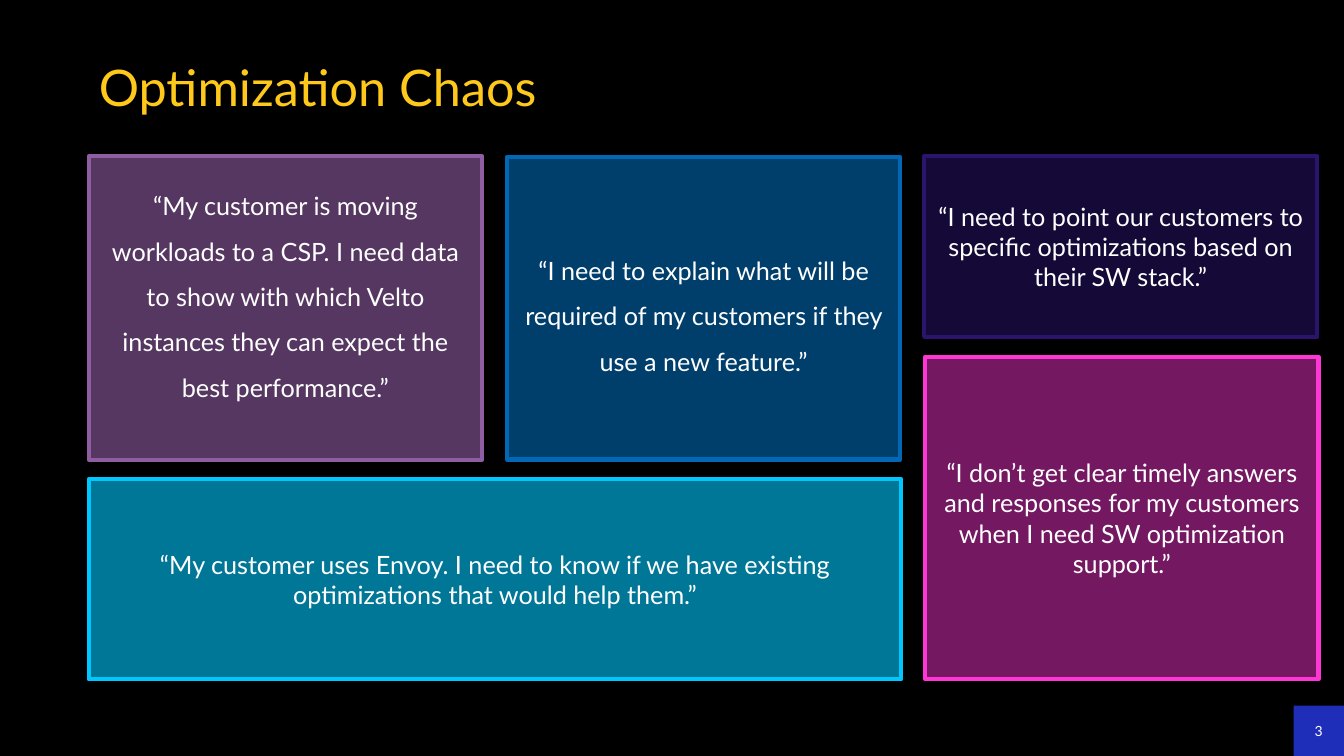
from lxml import etree
from pptx import Presentation
from pptx.dml.color import RGBColor
from pptx.enum import shapes, text
from pptx.oxml import ns
from pptx.util import Cm, Pt

BLACK = RGBColor(0x00, 0x00, 0x00)
WHITE = RGBColor(0xFF, 0xFF, 0xFF)
YELLOW = RGBColor(0xFE, 0xC9, 0x1B)
BLUE = RGBColor(0x1E, 0x2E, 0xB8)
PURPLE = RGBColor(0x8F, 0x5D, 0xA2)
INDIGO = RGBColor(0x2B, 0x14, 0x6E)
OCEAN = RGBColor(0x00, 0x68, 0xB5)
CYAN = RGBColor(0x00, 0xC7, 0xFD)
PINK = RGBColor(0xFF, 0x36, 0xD6)

FONT = "Lato"
TITLE = "Optimization Chaos"
PAGE = "3"
SLIDE_WIDTH, SLIDE_HEIGHT = 33.87, 19.05
LEFT = 2.24
CARD_WIDTH = 9.91
INSET = 0.13

# text, colour, opacity %, (left, top, width, height) in cm, line spacing, bottom inset
QUOTES = [
    ("“My customer is moving workloads to a CSP. I need data to show with which Velto "
     "instances they can expect the best performance.”",
     PURPLE, 60, (LEFT, 3.94, CARD_WIDTH, 7.65), 1.5, 1.1),
    ("“I need to point our customers to specific optimizations based on their SW stack.”",
     INDIGO, 50, (23.29, 3.94, CARD_WIDTH, 4.55), 1, INSET),
    ("“I need to explain what will be required of my customers if they use a new feature.”",
     OCEAN, 60, (12.78, 3.96, CARD_WIDTH, 7.62), 1.5, INSET),
    ("“My customer uses Envoy. I need to know if we have existing optimizations "
     "that would help them.”",
     CYAN, 60, (LEFT, 12.07, 20.47, 5.05), 1, INSET),
    ("“I don’t get clear timely answers and responses for my customers when I need "
     "SW optimization support.”",
     PINK, 46, (23.32, 8.99, CARD_WIDTH, 8.13), 1, INSET),
]


def add_rectangle(slide, box, color):
    shape = slide.shapes.add_shape(shapes.MSO_SHAPE.RECTANGLE, *map(Cm, box))
    shape.shadow.inherit = False
    shape.fill.solid()
    shape.fill.fore_color.rgb = color
    shape.line.fill.background()
    return shape


def set_opacity(shape, percent):
    color = shape.fill._xPr.find(ns.qn("a:solidFill"))[0]
    etree.SubElement(color, ns.qn("a:alpha"), val=str(percent * 1000))


def write(shape, words, size, color, align, spacing=1):
    frame = shape.text_frame
    frame.word_wrap = True
    frame.vertical_anchor = text.MSO_ANCHOR.MIDDLE
    paragraph = frame.paragraphs[0]
    paragraph.alignment = align
    paragraph.line_spacing = spacing
    run = paragraph.add_run()
    run.text = words
    run.font.name = FONT
    run.font.size = Pt(size)
    run.font.color.rgb = color


def add_quote(slide, words, color, opacity, box, spacing, bottom):
    card = add_rectangle(slide, box, color)
    set_opacity(card, opacity)
    card.line.color.rgb = color
    card.line.width = Pt(3)
    write(card, words, 18, WHITE, text.PP_ALIGN.CENTER, spacing)
    card.text_frame.margin_bottom = Cm(bottom)


def main():
    presentation = Presentation()
    presentation.slide_width = Cm(SLIDE_WIDTH)
    presentation.slide_height = Cm(SLIDE_HEIGHT)
    slide = presentation.slides.add_slide(presentation.slide_layouts[6])
    slide.background.fill.solid()
    slide.background.fill.fore_color.rgb = BLACK

    corner = 1.27
    page = add_rectangle(
        slide, (SLIDE_WIDTH - corner, SLIDE_HEIGHT - corner, corner, corner), BLUE)
    write(page, PAGE, 10, WHITE, text.PP_ALIGN.CENTER)

    title = slide.shapes.add_textbox(Cm(LEFT), Cm(0.61), Cm(29.29), Cm(3.33))
    write(title, TITLE, 36, YELLOW, text.PP_ALIGN.LEFT, 0.9)

    for quote in QUOTES:
        add_quote(slide, *quote)
    presentation.save("out.pptx")


if __name__ == "__main__":
    main()
